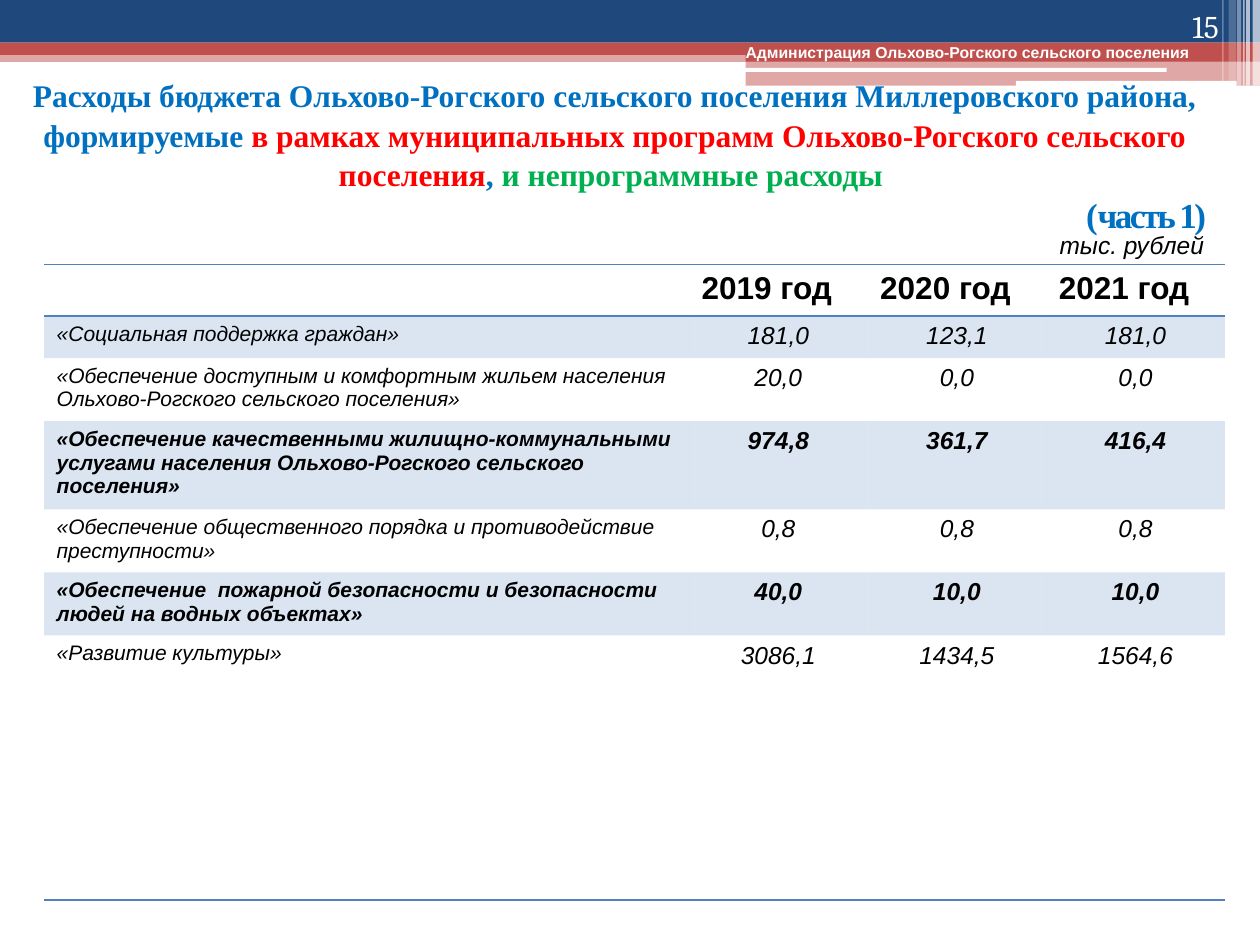
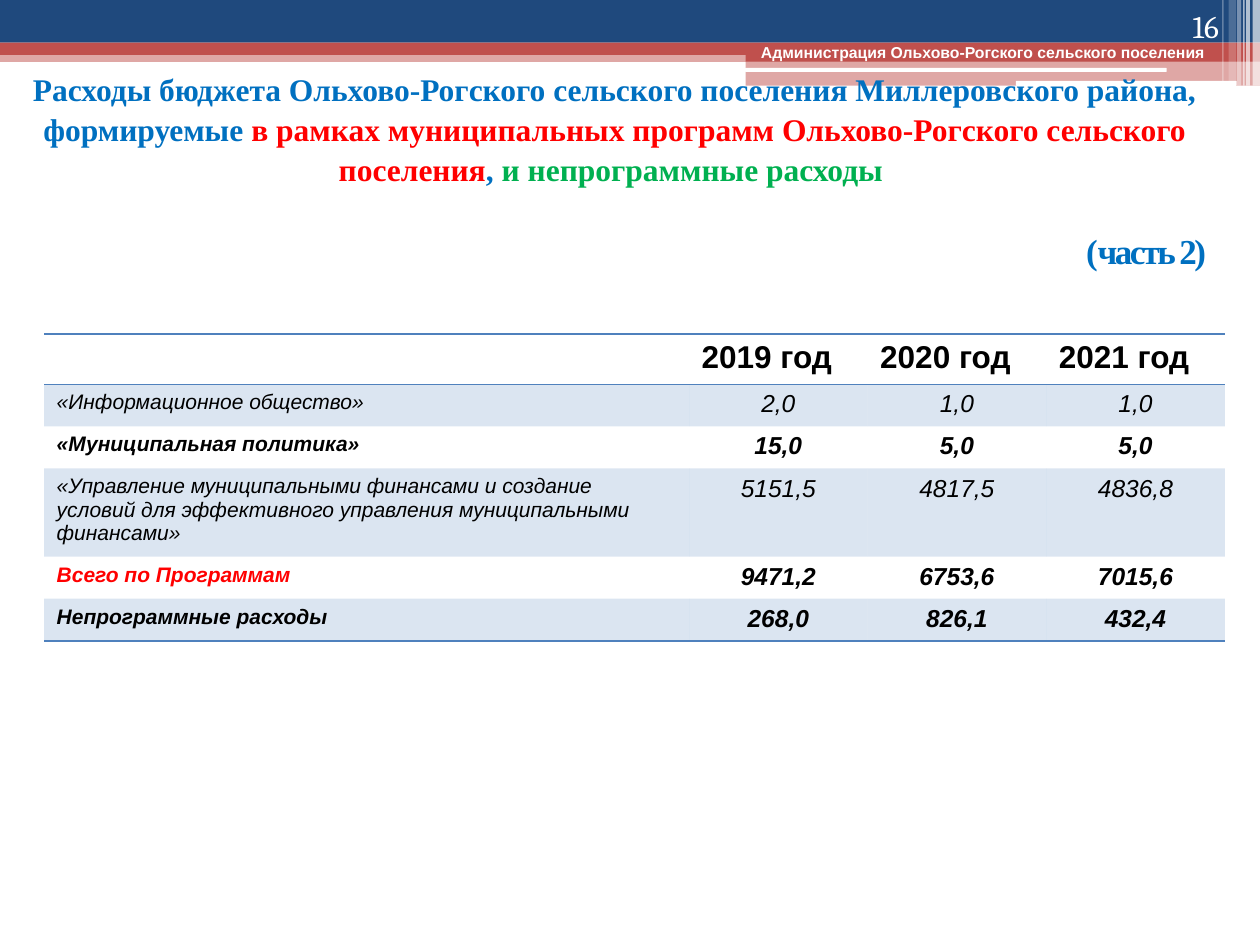
import dataclasses
import typing

import lxml.etree
import pptx
import pptx.dml.color
import pptx.enum.shapes
import pptx.enum.text
import pptx.oxml.ns
import pptx.util

Cm = pptx.util.Cm
Pt = pptx.util.Pt
Align = pptx.enum.text.PP_ALIGN
Anchor = pptx.enum.text.MSO_ANCHOR
Preset = pptx.enum.shapes.MSO_SHAPE
qn = pptx.oxml.ns.qn


@dataclasses.dataclass(frozen=True)
class Theme:
    navy: str = "1F497D"
    brick: str = "C0504D"
    steel: str = "4F81BD"
    white: str = "FFFFFF"
    black: str = "000000"
    blue: str = "0070C0"
    red: str = "FF0000"
    green: str = "00B050"
    sans: str = "Arial"
    serif: str = "Times New Roman"
    number_font: str = "Cambria"
    caption_size: int = 9
    label_size: int = 12
    value_size: int = 14
    heading_size: int = 18
    part_size: int = 20
    row_opacity: int = 20
    plain_table: str = "{2D5ABB26-0587-4C30-8999-92F81FD0307C}"


THEME = Theme()


@dataclasses.dataclass(frozen=True)
class Band:
    left: float
    top: float
    width: float
    height: float
    color: str = THEME.white
    opacity: int = 100
    preset: Preset = Preset.RECTANGLE


@dataclasses.dataclass(frozen=True)
class Programme:
    label: str
    values: tuple[str, ...]
    lines: int = 1
    bold: bool = False
    color: str = THEME.black
    height: float = 0

    def row_height(self) -> float:
        return self.height or max(0.81, 0.25 + 0.475 * self.lines)


@dataclasses.dataclass(frozen=True)
class Part:
    number: str
    part_label: str
    title_top: float
    title_height: float
    part_gap: int
    caption_left: float
    table_top: float
    header_height: float
    programmes: tuple[Programme, ...]
    unit: str = ""


BANDS = (
    Band(0, 1.02, 25.4, 0.23, THEME.brick, 50),
    Band(0, 0, 25.4, 0.86, THEME.navy),
    Band(0, 0.86, 25.4, 0.25, THEME.brick),
    Band(15.03, 0.99, 10.37, 0.25, THEME.brick),
    Band(15.03, 1.23, 10.37, 0.5, THEME.brick, 50),
    Band(15.02, 1.37, 8.5, 0.08, preset=Preset.ROUNDED_RECTANGLE),
    Band(20.48, 1.63, 4.45, 0.1, preset=Preset.ROUNDED_RECTANGLE),
    Band(25.25, 0, 0.15, 1.73, opacity=65),
    Band(25.12, 0, 0.08, 1.73, opacity=65),
    Band(25.06, 0, 0.03, 1.73, opacity=60),
    Band(24.94, 0, 0.08, 1.73, opacity=40),
    Band(24.77, 0, 0.15, 1.63, opacity=20),
    Band(24.64, 0, 0.03, 1.63, opacity=30),
)

CAPTION = "Администрация Ольхово-Рогского сельского поселения"
HEADING = (
    ("Расходы бюджета Ольхово-Рогского сельского поселения Миллеровского района, формируемые ", THEME.blue),
    ("в рамках муниципальных программ Ольхово-Рогского сельского поселения", THEME.red),
    (", ", THEME.blue),
    ("и непрограммные расходы ", THEME.green),
)
YEARS = ("2019 год", "2020 год", "2021 год")
COLUMN_WIDTHS = (13.0, 3.6, 3.6, 3.6)

PARTS = (
    Part(
        "15", "часть 1)", 1.52, 3.2, 0, 14.78, 5.33, 1.04,
        (
            Programme("«Социальная поддержка граждан»", ("181,0", "123,1", "181,0")),
            Programme(
                "«Обеспечение доступным и комфортным жильем населения Ольхово-Рогского сельского поселения»",
                ("20,0", "0,0", "0,0"), 2),
            Programme(
                "«Обеспечение качественными жилищно-коммунальными услугами населения "
                "Ольхово-Рогского сельского поселения»",
                ("974,8", "361,7", "416,4"), 3, True),
            Programme(
                "«Обеспечение общественного порядка и противодействие преступности»",
                ("0,8", "0,8", "0,8"), 2),
            Programme(
                "«Обеспечение  пожарной безопасности и безопасности людей на водных объектах»",
                ("40,0", "10,0", "10,0"), 2, True),
            Programme("«Развитие культуры»", ("3086,1", "1434,5", "1564,6"), height=5.33),
        ),
        "тыс. рублей",
    ),
    Part(
        "16", "часть 2)", 1.73, 3.4, 24, 15.09, 6.73, 0.98,
        (
            Programme("«Информационное общество»", ("2,0", "1,0", "1,0")),
            Programme("«Муниципальная политика»", ("15,0", "5,0", "5,0"), bold=True),
            Programme(
                "«Управление муниципальными финансами и создание условий для эффективного "
                "управления муниципальными финансами»",
                ("5151,5", "4817,5", "4836,8"), 3),
            Programme("Всего по Программам", ("9471,2", "6753,6", "7015,6"), bold=True, color=THEME.red),
            Programme("Непрограммные расходы", ("268,0", "826,1", "432,4"), bold=True),
        ),
    ),
)


def rgb(color: str) -> pptx.dml.color.RGBColor:
    return pptx.dml.color.RGBColor.from_string(color)


def paint(fill: typing.Any, properties: typing.Any, color: str, opacity: int) -> None:
    fill.solid()
    fill.fore_color.rgb = rgb(color)
    if opacity < 100:
        swatch = properties.find(qn("a:solidFill")).find(qn("a:srgbClr"))
        lxml.etree.SubElement(swatch, qn("a:alpha"), val=str(opacity * 1000))


def style(span: typing.Any, font: str, size: int, color: str,
          bold: bool = False, italic: bool = False) -> None:
    span.font.name = font
    span.font.size = Pt(size)
    span.font.color.rgb = rgb(color)
    span.font.bold = bold
    span.font.italic = italic


def add_bands(page: typing.Any, layout: typing.Any) -> None:
    for index, band in enumerate(BANDS):
        shape = page.shapes.add_shape(
            band.preset, Cm(band.left), Cm(band.top), Cm(band.width), Cm(band.height))
        shape.shadow.inherit = False
        shape.line.fill.background()
        paint(shape.fill, shape._element.spPr, band.color, band.opacity)
        shape._element.nvSpPr.cNvPr.id = 100 + index
        layout.shapes._spTree.append(shape._element)


def add_text(page: typing.Any, text: str, left: float, top: float, width: float,
             height: float) -> typing.Any:
    box = page.shapes.add_textbox(Cm(left), Cm(top), Cm(width), Cm(height))
    box.text_frame.word_wrap = True
    box.text_frame.text = text
    return box.text_frame


def add_heading(page: typing.Any, part: Part) -> None:
    title = page.shapes.title
    title.left, title.top = Cm(0), Cm(part.title_top)
    title.width, title.height = Cm(24.79), Cm(part.title_height)
    frame = title.text_frame
    frame.auto_size = pptx.enum.text.MSO_AUTO_SIZE.NONE
    frame.vertical_anchor = Anchor.MIDDLE
    frame.margin_left = frame.margin_right = Cm(0.48)
    para = frame.paragraphs[0]
    para.alignment = Align.CENTER
    para.line_spacing = 1.05
    for text, color in HEADING:
        span = para.add_run()
        span.text = text
        style(span, THEME.serif, THEME.heading_size, color, bold=True)
    para = frame.add_paragraph()
    para.alignment = Align.RIGHT
    para.space_before = Pt(part.part_gap)
    for text in ("(", part.part_label):
        span = para.add_run()
        span.text = text
        style(span, THEME.serif, THEME.part_size, THEME.blue, bold=True)
    span.font._element.set("spc", "-150")


def add_borders(cell: typing.Any, sides: str) -> None:
    properties = cell._tc.get_or_add_tcPr()
    for side in sides:
        line = lxml.etree.Element(qn(f"a:ln{side}"), w=str(Pt(1)))
        fill = lxml.etree.SubElement(line, qn("a:solidFill"))
        lxml.etree.SubElement(fill, qn("a:srgbClr"), val=THEME.steel)
        properties.insert(0, line)


def add_programme_table(page: typing.Any, part: Part) -> None:
    heights = [part.header_height] + [item.row_height() for item in part.programmes]
    frame = page.shapes.add_table(
        len(heights), len(COLUMN_WIDTHS), Cm(0.89), Cm(part.table_top),
        Cm(sum(COLUMN_WIDTHS)), Cm(sum(heights)))
    table = frame.table
    table.first_row = table.horz_banding = False
    table._tbl.tblPr.find(qn("a:tableStyleId")).text = THEME.plain_table
    for column, width in zip(table.columns, COLUMN_WIDTHS):
        column.width = Cm(width)
    for row, height in zip(table.rows, heights):
        row.height = Cm(height)

    for column, year in enumerate(("", *YEARS)):
        cell = table.cell(0, column)
        cell.fill.background()
        add_borders(cell, "BT")
        if year:
            cell.text_frame.text = year
            style(cell.text_frame.paragraphs[0].runs[0], THEME.sans,
                  THEME.heading_size, THEME.black, bold=True)

    for row, item in enumerate(part.programmes, start=1):
        for column, text in enumerate((item.label, *item.values)):
            cell = table.cell(row, column)
            cell.text_frame.text = text
            para = cell.text_frame.paragraphs[0]
            if column:
                para.alignment = Align.CENTER
                size, color = THEME.value_size, THEME.black
            else:
                size, color = THEME.label_size, item.color
            style(para.runs[0], THEME.sans, size, color, item.bold, italic=True)
            if row % 2:
                paint(cell.fill, cell._tc.get_or_add_tcPr(), THEME.steel, THEME.row_opacity)
            else:
                cell.fill.background()
            if row == len(part.programmes):
                add_borders(cell, "B")


def add_part(page: typing.Any, part: Part) -> None:
    caption = add_text(page, CAPTION, part.caption_left, 0.74, 9.6, 0.64)
    style(caption.paragraphs[0].runs[0], THEME.sans, THEME.caption_size, THEME.white, bold=True)
    add_heading(page, part)
    number = add_text(page, part.number, 22.71, 0, 2.11, 1.02)
    number.vertical_anchor = Anchor.BOTTOM
    number.paragraphs[0].alignment = Align.RIGHT
    style(number.paragraphs[0].runs[0], THEME.number_font, THEME.heading_size, THEME.white)
    add_programme_table(page, part)
    if part.unit:
        unit = add_text(page, part.unit, 21.11, 4.52, 3.6, 0.86)
        style(unit.paragraphs[0].runs[0], THEME.sans, THEME.value_size, THEME.black, italic=True)


def main() -> None:
    deck = pptx.Presentation()
    deck.slide_width, deck.slide_height = Cm(25.4), Cm(19.05)
    layout = deck.slide_layouts[5]
    for index, part in enumerate(PARTS):
        page = deck.slides.add_slide(layout)
        if index == 0:
            add_bands(page, layout)
        add_part(page, part)
    deck.save("out.pptx")


if __name__ == "__main__":
    main()
